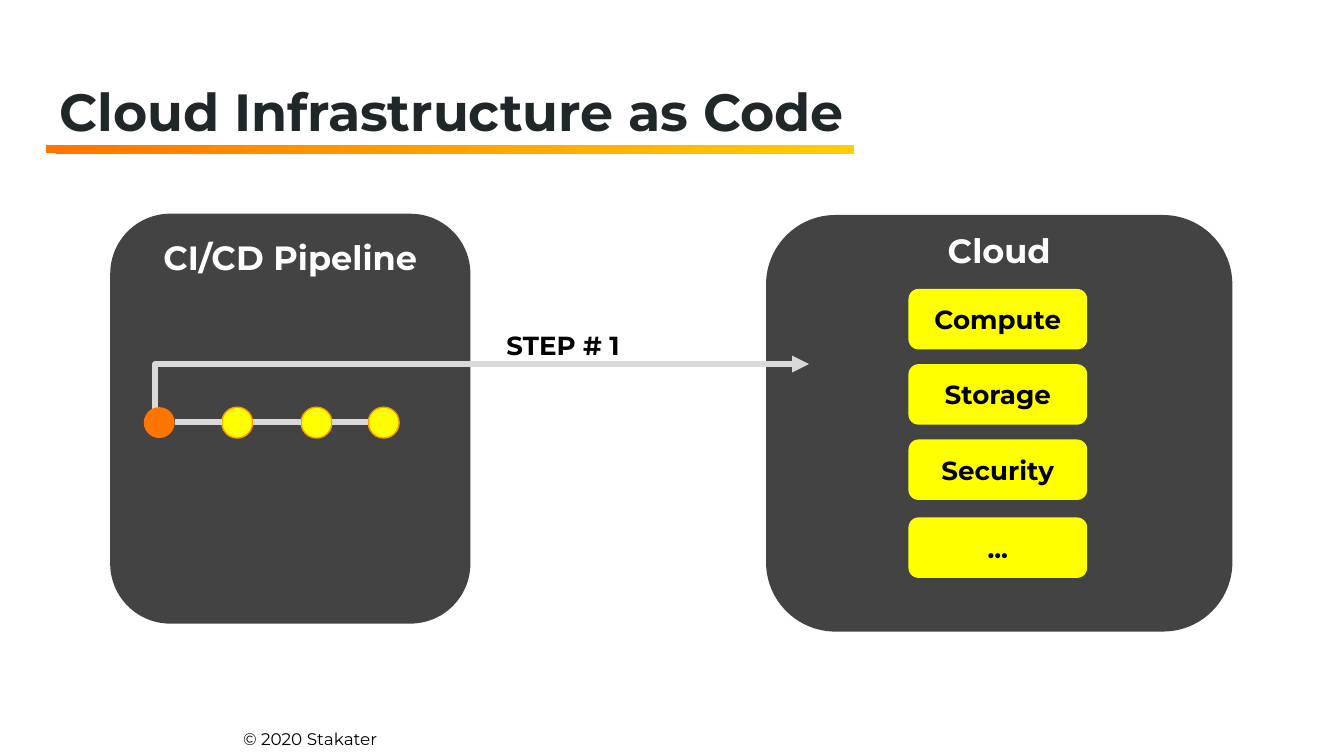
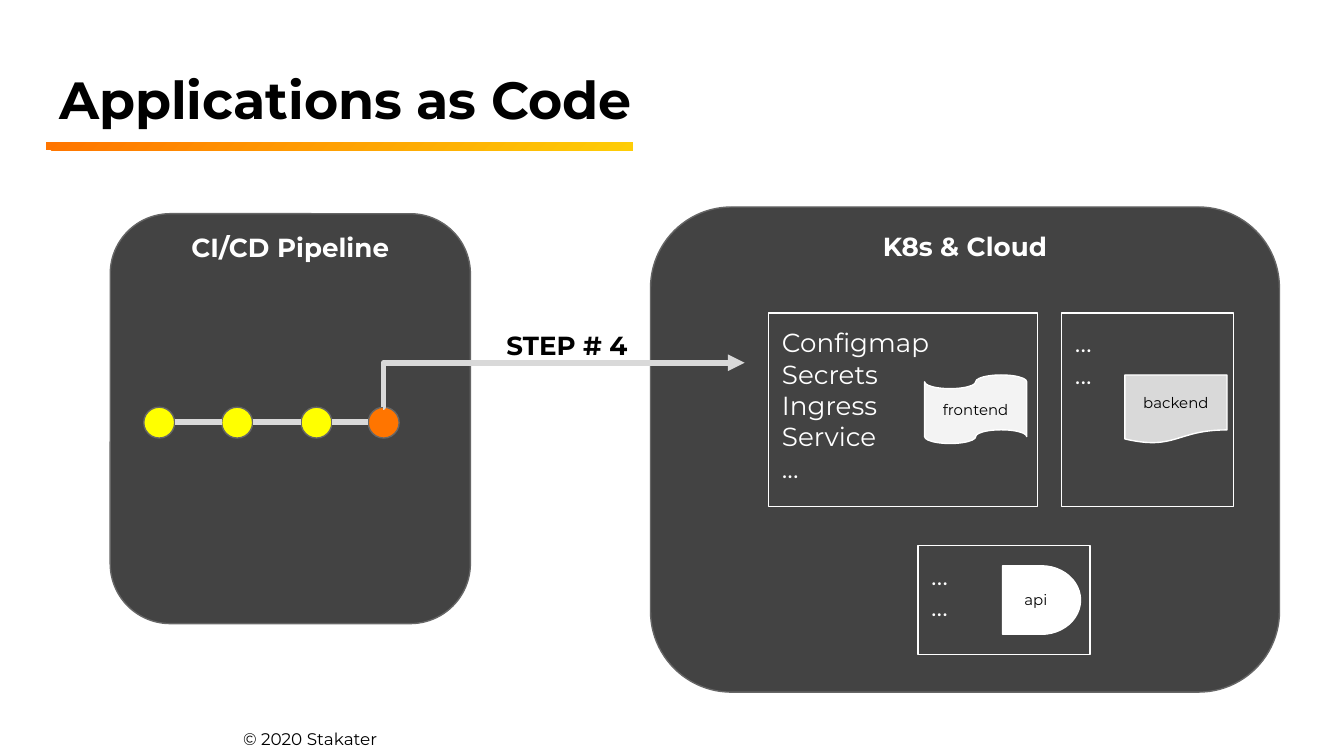
from dataclasses import dataclass
from itertools import pairwise
from typing import Optional

from lxml.etree import SubElement
from pptx import Presentation
from pptx.dml.color import RGBColor
from pptx.enum.shapes import MSO_CONNECTOR, MSO_SHAPE
from pptx.enum.text import MSO_ANCHOR, MSO_AUTO_SIZE, PP_ALIGN
from pptx.oxml.ns import qn
from pptx.shapes.autoshape import Shape
from pptx.shapes.connector import Connector
from pptx.slide import Slide
from pptx.text.text import TextFrame
from pptx.util import Inches, Pt

FONT = "Montserrat"
BLACK = RGBColor(0x00, 0x00, 0x00)
WHITE = RGBColor(0xFF, 0xFF, 0xFF)
INK = RGBColor(0x20, 0x27, 0x29)
CHARCOAL = RGBColor(0x43, 0x43, 0x43)
GREY = RGBColor(0x66, 0x66, 0x66)
SILVER = RGBColor(0xD9, 0xD9, 0xD9)
PALE = RGBColor(0xF3, 0xF3, 0xF3)
YELLOW = RGBColor(0xFF, 0xFF, 0x00)
AMBER = RGBColor(0xFF, 0x99, 0x00)
ORANGE = RGBColor(0xFF, 0x75, 0x00)
GOLD = RGBColor(0xFE, 0xCD, 0x07)

SLIDE_WIDTH = Inches(10)
SLIDE_HEIGHT = SLIDE_WIDTH * 9 // 16

NODE_LEFTS = (1.07, 1.65, 2.24, 2.74)
NODE_TOP = 3.03
NODE_SIZE = 0.23
NODE_MIDDLE = 3.14


@dataclass(frozen=True)
class Box:
    left: float
    top: float
    width: float
    height: float

    def lengths(self) -> tuple[Inches, Inches, Inches, Inches]:
        return Inches(self.left), Inches(self.top), Inches(self.width), Inches(self.height)


@dataclass(frozen=True)
class TextStyle:
    size: float
    color: RGBColor = BLACK
    bold: bool = False
    align: PP_ALIGN = PP_ALIGN.LEFT
    anchor: MSO_ANCHOR = MSO_ANCHOR.TOP
    top_inset: float = 0.1


@dataclass(frozen=True)
class Heading:
    text: str
    top: float
    color: RGBColor
    rule: Box


@dataclass(frozen=True)
class Panel:
    title: str
    box: Box
    size: float
    top_inset: float = 0
    line: Optional[RGBColor] = None


@dataclass(frozen=True)
class Node:
    fill: RGBColor
    line: Optional[RGBColor]


@dataclass(frozen=True)
class Service:
    name: str
    top: float


@dataclass(frozen=True)
class Application:
    resources: tuple[str, ...]
    frame: Box
    name: str
    kind: MSO_SHAPE
    badge: Box
    fill: RGBColor


STEP_STYLE = TextStyle(14, bold=True)
FOOTER_STYLE = TextStyle(9)
SERVICE_STYLE = TextStyle(14, BLACK, True, PP_ALIGN.CENTER, MSO_ANCHOR.MIDDLE)
RESOURCE_STYLE = TextStyle(14, WHITE)
BADGE_STYLE = TextStyle(8, BLACK, False, PP_ALIGN.CENTER, MSO_ANCHOR.MIDDLE)

PIPELINE_BOX = Box(0.82, 1.59, 2.68, 3.05)
SERVICES = (
    Service("Compute", 2.15),
    Service("Storage", 2.71),
    Service("Security", 3.27),
    Service("...", 3.85),
)
APPLICATIONS = (
    Application(("Configmap", "Secrets", "Ingress", "Service", "..."),
                Box(5.72, 2.33, 2, 1.44), "frontend",
                MSO_SHAPE.FLOWCHART_PUNCHED_TAPE, Box(6.88, 2.79, 0.76, 0.51), PALE),
    Application(("…", "..."), Box(6.83, 4.06, 1.28, 0.81), "api",
                MSO_SHAPE.FLOWCHART_DELAY, Box(7.46, 4.21, 0.58, 0.51), WHITE),
    Application(("…", "..."), Box(7.9, 2.33, 1.28, 1.44), "backend",
                MSO_SHAPE.FLOWCHART_DOCUMENT, Box(8.37, 2.79, 0.76, 0.51), SILVER),
)


def write(frame: TextFrame, lines: tuple[str, ...], style: TextStyle) -> None:
    frame.word_wrap = True
    frame.auto_size = MSO_AUTO_SIZE.NONE
    frame.vertical_anchor = style.anchor
    frame.margin_left = frame.margin_right = frame.margin_bottom = Inches(0.1)
    frame.margin_top = Inches(style.top_inset)
    frame.text = "\n".join(lines)
    for paragraph in frame.paragraphs:
        paragraph.alignment = style.align
        paragraph.font.name = FONT
        paragraph.font.size = Pt(style.size)
        paragraph.font.bold = style.bold
        paragraph.font.color.rgb = style.color


def add_label(slide: Slide, text: str, box: Box, style: TextStyle) -> None:
    write(slide.shapes.add_textbox(*box.lengths()).text_frame, (text,), style)


def add_figure(shapes, kind: MSO_SHAPE, box: Box, fill: Optional[RGBColor] = None,
               line: Optional[RGBColor] = None) -> Shape:
    shape = shapes.add_shape(kind, *box.lengths())
    shape.shadow.inherit = False
    if fill is None:
        shape.fill.background()
    else:
        shape.fill.solid()
        shape.fill.fore_color.rgb = fill
    if line is None:
        shape.line.fill.background()
    else:
        shape.line.color.rgb = line
        shape.line.width = Pt(0.75)
    return shape


def add_link(slide: Slide, kind: MSO_CONNECTOR, start: tuple[float, float],
             end: tuple[float, float]) -> Connector:
    connector = slide.shapes.add_connector(
        kind, *(Inches(value) for value in (*start, *end)))
    connector.line.color.rgb = SILVER
    connector.line.width = Pt(3)
    SubElement(connector._element.spPr, qn("a:effectLst"))
    return connector


def add_step(slide: Slide, text: str, start: tuple[float, float],
             end: tuple[float, float]) -> None:
    arrow = add_link(slide, MSO_CONNECTOR.ELBOW, start, end)
    properties = arrow._element.spPr
    adjustments = properties.find(qn("a:prstGeom")).get_or_add_avLst()
    SubElement(adjustments, qn("a:gd"), name="adj1", fmla="val 100")
    SubElement(properties.find(qn("a:ln")), qn("a:tailEnd"), type="triangle")
    add_label(slide, text, Box(3.67, 2.35, 1.33, 0.36), STEP_STYLE)


def add_panel(slide: Slide, panel: Panel) -> None:
    shape = add_figure(slide.shapes, MSO_SHAPE.ROUNDED_RECTANGLE, panel.box,
                       CHARCOAL, panel.line)
    write(shape.text_frame, (panel.title,),
          TextStyle(panel.size, WHITE, True, PP_ALIGN.CENTER, top_inset=panel.top_inset))


def add_pipeline(slide: Slide, nodes: tuple[Node, ...]) -> None:
    for left, node in zip(NODE_LEFTS, nodes):
        add_figure(slide.shapes, MSO_SHAPE.OVAL,
                   Box(left, NODE_TOP, NODE_SIZE, NODE_SIZE), node.fill, node.line)
    for left, following in pairwise(NODE_LEFTS):
        add_link(slide, MSO_CONNECTOR.STRAIGHT,
                 (left + NODE_SIZE, NODE_MIDDLE), (following, NODE_MIDDLE))


def add_service(slide: Slide, service: Service) -> None:
    shape = add_figure(slide.shapes, MSO_SHAPE.ROUNDED_RECTANGLE,
                       Box(6.76, service.top, 1.33, 0.45), YELLOW)
    write(shape.text_frame, (service.name,), SERVICE_STYLE)


def add_application(slide: Slide, application: Application) -> None:
    group = slide.shapes.add_group_shape()
    frame = add_figure(group.shapes, MSO_SHAPE.RECTANGLE, application.frame, line=WHITE)
    write(frame.text_frame, application.resources, RESOURCE_STYLE)
    badge = add_figure(group.shapes, application.kind, application.badge,
                       application.fill, WHITE)
    write(badge.text_frame, (application.name,), BADGE_STYLE)


def start_slide(presentation, heading: Heading) -> Slide:
    slide = presentation.slides.add_slide(presentation.slide_layouts.get_by_name("Title Only"))
    title = slide.shapes.title
    title.left, title.top, title.width, title.height = Box(
        0.34, heading.top, 9.32, 0.63).lengths()
    write(title.text_frame, (heading.text,), TextStyle(28, heading.color, True))
    rule = add_figure(slide.shapes, MSO_SHAPE.RECTANGLE, heading.rule, ORANGE)
    rule.fill.gradient()
    rule.fill.gradient_angle = 315
    for stop, color in zip(rule.fill.gradient_stops, (ORANGE, GOLD)):
        stop.color.rgb = color
    add_label(slide, "© 2020 Stakater", Box(1.71, 5.32, 3.18, 0.32), FOOTER_STYLE)
    return slide


def build_infrastructure(presentation) -> None:
    slide = start_slide(presentation, Heading(
        "Cloud Infrastructure as Code", 0.49, INK, Box(0.34, 1.08, 6.01, 0.06)))
    add_panel(slide, Panel("CI/CD Pipeline", PIPELINE_BOX, 18, 0.04))
    add_panel(slide, Panel("Cloud", Box(5.7, 1.6, 3.47, 3.1), 18, -0.04))
    add_step(slide, "STEP # 1", (1.15, 3.07), (6.02, 2.71))
    add_pipeline(slide, (Node(ORANGE, None),) + (Node(YELLOW, AMBER),) * 3)
    for service in SERVICES:
        add_service(slide, service)


def build_applications(presentation) -> None:
    slide = start_slide(presentation, Heading(
        "Applications as Code", 0.4, BLACK, Box(0.34, 1.06, 4.37, 0.06)))
    add_panel(slide, Panel("K8s & Cloud", Box(4.84, 1.54, 4.68, 3.61), 14, line=GREY))
    add_panel(slide, Panel("CI/CD Pipeline", PIPELINE_BOX, 14, line=GREY))
    add_pipeline(slide, (Node(YELLOW, GREY),) * 3 + (Node(ORANGE, GREY),))
    add_step(slide, "STEP # 4", (2.85, 3.03), (5.54, 2.7))
    for application in APPLICATIONS:
        add_application(slide, application)


def main() -> None:
    presentation = Presentation()
    presentation.slide_width = SLIDE_WIDTH
    presentation.slide_height = SLIDE_HEIGHT
    build_infrastructure(presentation)
    build_applications(presentation)
    presentation.save("out.pptx")


if __name__ == "__main__":
    main()
